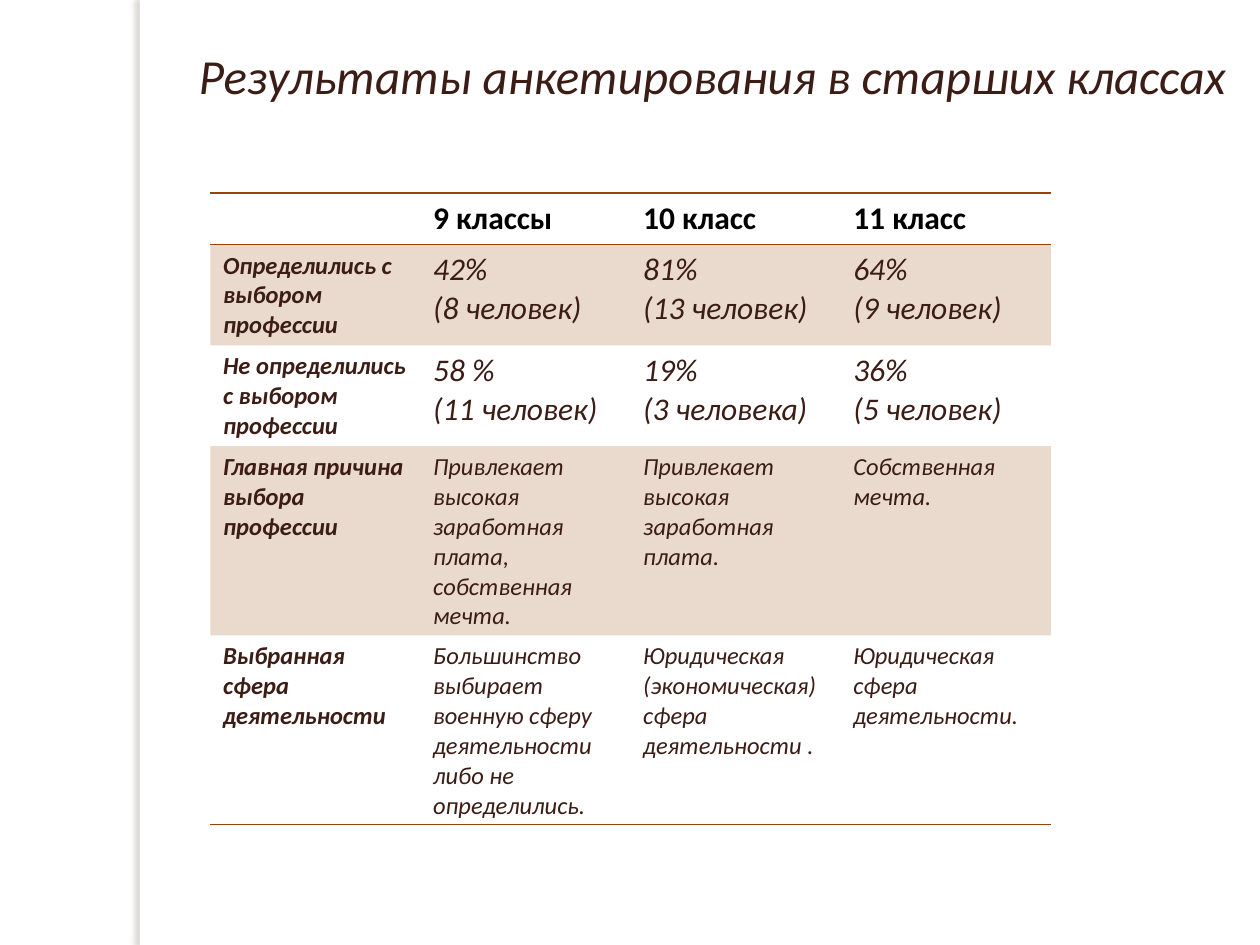
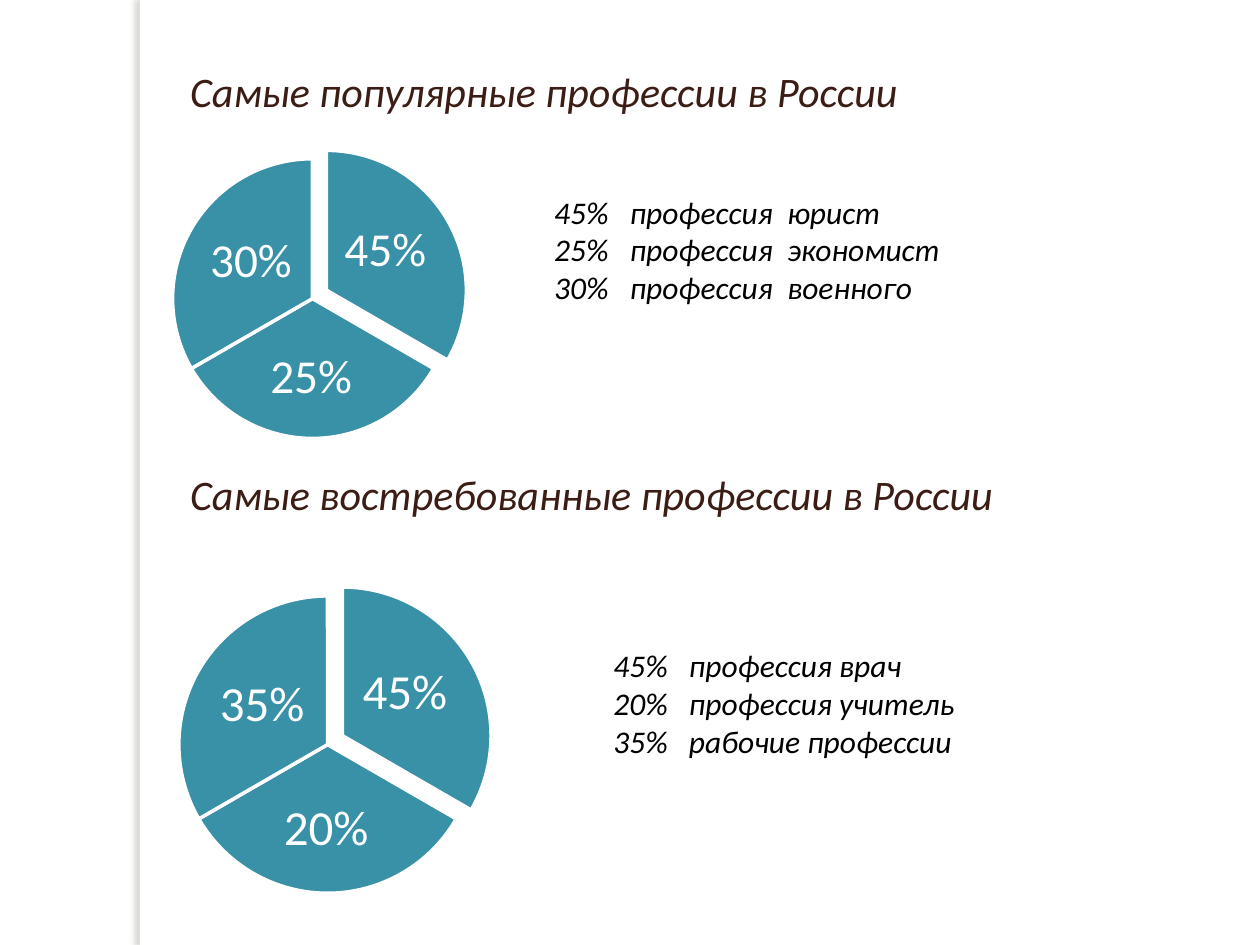
"""Build two slides with survey results on the choice of a profession."""
from lxml.etree import SubElement
from pptx import Presentation
from pptx.dml.color import RGBColor
from pptx.enum.shapes import MSO_SHAPE
from pptx.enum.text import MSO_ANCHOR, PP_ALIGN
from pptx.oxml.ns import qn
from pptx.util import Inches, Pt

HUES = {"white": "FFFFFF", "black": "000000", "brown": "3B1D15",
        "rust": "964305", "teal": "3891A7", "shade": "736F63"}
FONTS = {
    "title": {"size": Pt(28), "italic": True, "color": "brown"},
    "topic": {"size": Pt(24), "italic": True, "color": "brown"},
    "list": {"size": Pt(18), "italic": True, "color": "black"},
    "head": {"size": Pt(18), "bold": True, "color": "black"},
    "side": {"size": Pt(14), "bold": True, "italic": True, "color": "brown"},
    "count": {"size": Pt(18), "italic": True, "color": "brown"},
    "note": {"size": Pt(14), "italic": True, "color": "brown"},
    "small": {"size": Pt(27), "color": "white"},
    "large": {"size": Pt(28), "color": "white"},
}
ROWS = [
    ("head", 0.41, ["", "9 классы", "10 класс", "11 класс"]),
    ("count", 0.8, ["Определились с выбором профессии", "42%\n(8 человек)",
                    "81%\n(13 человек)", "64%\n(9 человек)"]),
    ("count", 0.8, ["Не определились с выбором профессии", "58 %\n(11 человек)",
                    "19%\n(3 человека)", "36%\n(5 человек)"]),
    ("note", 1.5, ["Главная причина выбора профессии",
                   "Привлекает высокая заработная плата, собственная мечта.",
                   "Привлекает высокая заработная плата.", "Собственная мечта."]),
    ("note", 1.5, ["Выбранная сфера деятельности",
                   "Большинство выбирает военную сферу деятельности либо не определились.",
                   "Юридическая (экономическая) сфера деятельности .",
                   "Юридическая сфера деятельности."]),
]
PLAIN = "{2D5ABB26-0587-4C30-8999-92F81FD0307C}"
SLICES = [
    ((162, 18), (0.05, -0.03), (0.59, 0.16, 0.34, 0.34)),
    ((18, 90), (0, 0), (0.27, 0.63, 0.45, 0.31)),
    ((90, 162), (0, 0), (0.11, 0.2, 0.34, 0.34)),
]


def hue(name):
    """Return the named colour."""
    return RGBColor.from_string(HUES[name])


def node(root, tag, **attrs):
    """Append a drawing element to root."""
    return SubElement(root, qn(tag), {key: str(val) for key, val in attrs.items()})


def write(frame, words, style):
    """Fill a text frame with one paragraph per line in a named style."""
    frame.text = words
    for para in frame.paragraphs:
        para.font.name = "Calibri"
        for run in para.runs:
            run.font.name = "Calibri"
            for key, val in FONTS[style].items():
                if key == "color":
                    run.font.color.rgb = hue(val)
                else:
                    setattr(run.font, key, val)


def text(slide, box, words, style, stops=()):
    """Add a text box with optional tab stops."""
    frame = slide.shapes.add_textbox(*map(Inches, box)).text_frame
    write(frame, words, style)
    frame.word_wrap = False
    for para in frame.paragraphs if stops else ():
        tabs = node(para._p.get_or_add_pPr(), "a:tabLst")
        for stop in stops:
            node(tabs, "a:tab", pos=Inches(stop), algn="l")
    return frame


def label(slide, box, words, style):
    """Add a centred slice label."""
    frame = text(slide, box, words, style)
    form = dict.fromkeys(("margin_left", "margin_right", "margin_top",
                          "margin_bottom"), Inches(0.04))
    form.update(word_wrap=True, vertical_anchor=MSO_ANCHOR.MIDDLE)
    for key, val in form.items():
        setattr(frame, key, val)
    para = frame.paragraphs[0]
    para.alignment = PP_ALIGN.CENTER
    para.line_spacing = 0.9


def shape(slide, kind, box, fill):
    """Add a filled preset shape with no shadow."""
    item = slide.shapes.add_shape(kind, *map(Inches, box))
    item.shadow.inherit = False
    item.fill.solid()
    item.fill.fore_color.rgb = hue(fill)
    return item


def page(deck):
    """Add a blank slide with the shaded band at its left."""
    slide = deck.slides.add_slide(deck.slide_layouts[6])
    band = shape(slide, MSO_SHAPE.RECTANGLE, (1.11, 0, 0.08, 7.5), "white")
    band.line.fill.background()
    glow = node(band.element.spPr.find(qn("a:effectLst")), "a:outerShdw",
                blurRad=Pt(3), dist=Pt(3), dir=10800000, algn="tl", rotWithShape=0)
    tint = node(glow, "a:srgbClr", val=HUES["shade"])
    node(tint, "a:alpha", val=25000)
    return slide


def edge(cell, sides):
    """Draw rust rules on the given sides of a cell and none on the others."""
    props = cell._tc.get_or_add_tcPr()
    for side in "LRTB":
        line = node(props, f"a:ln{side}", w=Pt(1))
        if side in sides:
            node(node(line, "a:solidFill"), "a:srgbClr", val=HUES["rust"])
        else:
            node(line, "a:noFill")


def paint(cell, tinted):
    """Give a cell a pale rust fill or none."""
    if not tinted:
        cell.fill.background()
        return
    cell.fill.solid()
    cell.fill.fore_color.rgb = hue("rust")
    tint = next(cell._tc.tcPr.find(qn("a:solidFill")).iter(qn("a:srgbClr")))
    node(tint, "a:alpha", val=20000)


def grid(slide, left, top, width):
    """Add the survey table."""
    high = sum(row[1] for row in ROWS)
    frame = slide.shapes.add_table(len(ROWS), len(ROWS[0][2]),
                                   *map(Inches, (left, top, width, high)))
    next(frame.element.iter(qn("a:tableStyleId"))).text = PLAIN
    table = frame.table
    table.horz_banding = False
    last = len(ROWS) - 1
    sides = {0: "TB", 1: "T", last: "B"}
    for r, (style, tall, words) in enumerate(ROWS):
        table.rows[r].height = Inches(tall)
        for c, word in enumerate(words):
            cell = table.cell(r, c)
            write(cell.text_frame, word, "side" if r and not c else style)
            edge(cell, sides.get(r, ""))
            paint(cell, r % 2)


def pie(slide, left, top, size, shares, style):
    """Add three equal slices, the first pulled out, with their labels."""
    for share, (turn, (dx, dy), (x, y, w, h)) in zip(shares, SLICES):
        box = (left + dx * size, top + dy * size, size, size)
        part = shape(slide, MSO_SHAPE.PIE, box, "teal")
        part.adjustments[0], part.adjustments[1] = turn
        part.line.color.rgb = hue("white")
        part.line.width = Pt(2)
        spot = (left + x * size, top + y * size, w * size, h * size)
        label(slide, spot, f"{share}%", style)


def main():
    """Build and save the deck."""
    deck = Presentation()
    deck.slide_width, deck.slide_height = Inches(10), Inches(7.5)

    slide = page(deck)
    text(slide, (1.48, 0.31, 8.41, 0.57),
         "Результаты анкетирования в старших классах", "title")
    grid(slide, 1.67, 1.53, 6.67)

    slide = page(deck)
    text(slide, (1.41, 0.47, 6.61, 0.5), "Самые популярные профессии в России", "topic")
    pie(slide, 1.37, 1.26, 2.22, (45, 25, 30), "small")
    text(slide, (4.3, 1.48, 3.27, 1.01),
         "45%\tпрофессия\tюрист\n25%\tпрофессия\tэкономист\n30%\tпрофессия\tвоенного",
         "list", (0.6, 1.85))
    text(slide, (1.41, 3.67, 6.61, 0.5), "Самые востребованные профессии в России", "topic")
    pie(slide, 1.42, 4.73, 2.36, (45, 20, 35), "large")
    text(slide, (4.77, 5.08, 2.94, 1.01),
         "45%\tпрофессия врач\n20%\tпрофессия учитель\n35%\tрабочие профессии",
         "list", (0.6,))
    deck.save("out.pptx")


if __name__ == "__main__":
    main()
